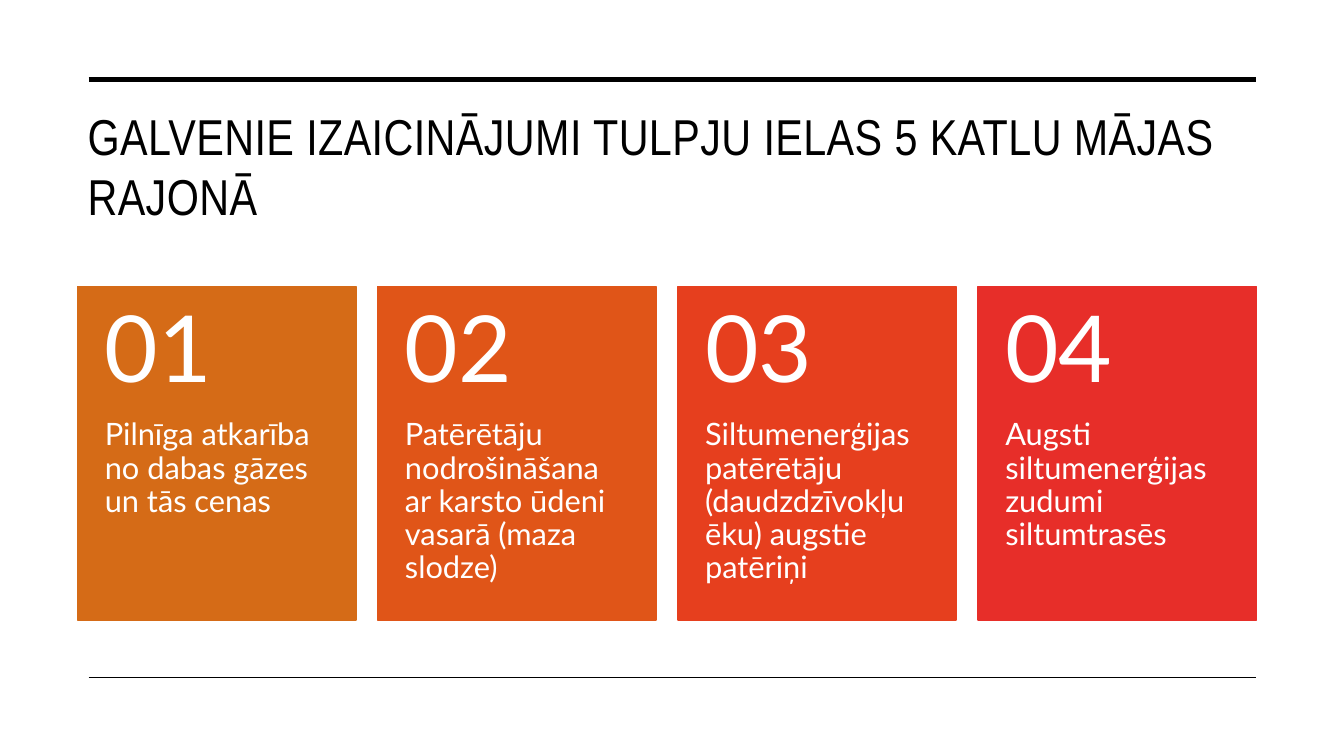
from dataclasses import dataclass

from pptx import Presentation
from pptx.dml.color import RGBColor
from pptx.enum.shapes import MSO_CONNECTOR, MSO_SHAPE
from pptx.enum.text import MSO_ANCHOR, PP_ALIGN
from pptx.oxml.ns import qn
from pptx.slide import Slide
from pptx.util import Inches, Pt
from lxml import etree

COLORS = {
    "ink": "000000",
    "white": "FFFFFF",
    "ochre": "D56B17",
    "orange": "E05518",
    "vermilion": "E63F1E",
    "red": "E72E29",
}

CARD_LEFT, CARD_TOP, CARD_STEP = 0.77, 2.84, 2.977
CARD_WIDTH, CARD_HEIGHT, NUMBER_HEIGHT = 2.76, 3.31, 1.32
RULE_LEFT, RULE_RIGHT = 0.88, 12.46


@dataclass(frozen=True)
class Card:
    text: str
    color: str


@dataclass(frozen=True)
class Rule:
    y: float
    weight: float


@dataclass(frozen=True)
class TextStyle:
    font: str
    size: float
    color: str
    margins: tuple[float, float, float, float] = (0.1, 0.05, 0.1, 0.05)
    anchor: MSO_ANCHOR = MSO_ANCHOR.TOP
    line_spacing: float = 1.0
    tracking: float = 0


TITLE = TextStyle("Arial Narrow", 36, "ink", tracking=0.3)
NUMBER = TextStyle("Lato", 66, "white", (0.27, 0.18, 0.27, 0.18), MSO_ANCHOR.MIDDLE, 0.9)
BODY = TextStyle("Lato", 22, "white", (0.27, 0, 0.27, 0.36), line_spacing=0.9)

RULES = [Rule(0.79, 3.5), Rule(6.72, 1)]
CARDS = [
    Card("Pilnīga atkarība no dabas gāzes un tās cenas", "ochre"),
    Card("Patērētāju nodrošināšana ar karsto ūdeni vasarā (maza slodze)", "orange"),
    Card("Siltumenerģijas patērētāju (daudzdzīvokļu ēku) augstie patēriņi", "vermilion"),
    Card("Augsti siltumenerģijas zudumi siltumtrasēs", "red"),
]


def rgb(name: str) -> RGBColor:
    return RGBColor.from_string(COLORS[name])


def set_all(target: object, values: dict[str, object]) -> None:
    for name, value in values.items():
        setattr(target, name, value)


def add_text(s: Slide, text: str, left: float, top: float, width: float,
             height: float, style: TextStyle) -> None:
    tf = s.shapes.add_textbox(*map(Inches, (left, top, width, height))).text_frame
    sides = ("margin_left", "margin_top", "margin_right", "margin_bottom")
    set_all(tf, dict(zip(sides, map(Inches, style.margins))))
    set_all(tf, {"word_wrap": True, "vertical_anchor": style.anchor})
    p = tf.paragraphs[0]
    set_all(p, {"alignment": PP_ALIGN.LEFT, "line_spacing": style.line_spacing})
    r = p.add_run()
    r.text = text
    set_all(r.font, {"name": style.font, "size": Pt(style.size)})
    r.font.color.rgb = rgb(style.color)
    if style.tracking:
        r.font._element.set("spc", str(round(style.tracking * 100)))


def add_rule(s: Slide, rule: Rule) -> None:
    line = s.shapes.add_connector(
        MSO_CONNECTOR.STRAIGHT, Inches(RULE_LEFT), Inches(rule.y),
        Inches(RULE_RIGHT), Inches(rule.y))
    line.line.color.rgb = rgb("ink")
    line.line.width = Pt(rule.weight)
    etree.SubElement(line._element.spPr, qn("a:effectLst"))


def add_card(s: Slide, index: int, card: Card) -> None:
    left = CARD_LEFT + index * CARD_STEP
    sp = s.shapes.add_shape(
        MSO_SHAPE.RECTANGLE,
        *map(Inches, (left, CARD_TOP, CARD_WIDTH, CARD_HEIGHT)))
    sp.shadow.inherit = False
    sp.fill.solid()
    sp.fill.fore_color.rgb = rgb(card.color)
    sp.line.color.rgb = rgb(card.color)
    sp.line.width = Pt(1)
    add_text(s, card.text, left, CARD_TOP + NUMBER_HEIGHT, CARD_WIDTH,
             CARD_HEIGHT - NUMBER_HEIGHT, BODY)
    add_text(s, f"{index + 1:02}", left, CARD_TOP, CARD_WIDTH, NUMBER_HEIGHT, NUMBER)


def main() -> None:
    prs = Presentation()
    set_all(prs, {"slide_width": Inches(13.33), "slide_height": Inches(7.5)})
    s = prs.slides.add_slide(prs.slide_layouts[6])
    add_text(s, "GALVENIE IZAICINĀJUMI TULPJU IELAS 5 KATLU MĀJAS RAJONĀ",
             0.77, 0.99, 11.69, 1.26, TITLE)
    for rule in RULES:
        add_rule(s, rule)
    for index, card in enumerate(CARDS):
        add_card(s, index, card)
    prs.save("out.pptx")


if __name__ == "__main__":
    main()
